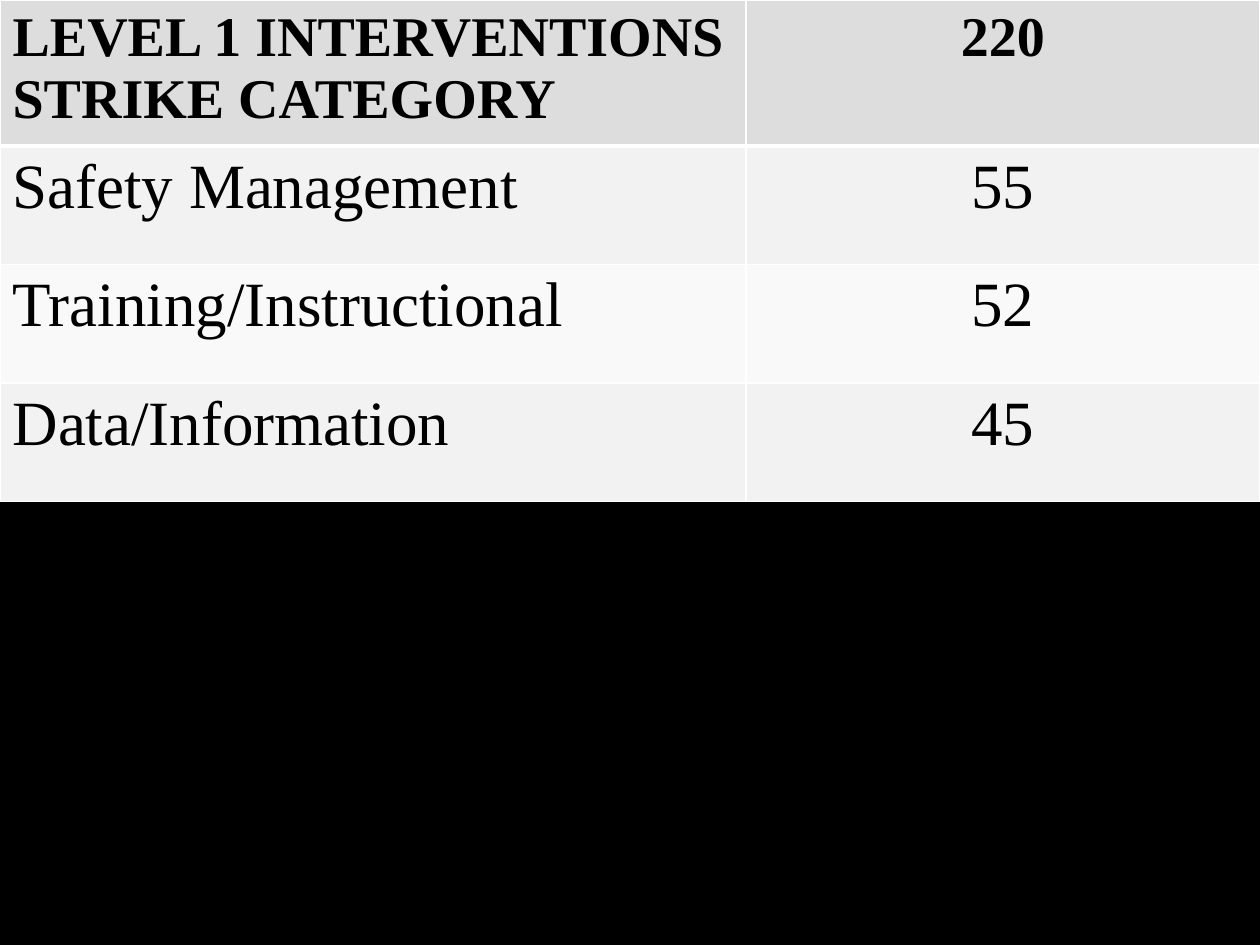
from lxml.etree import SubElement as Sub
from pptx import Presentation
from pptx.dml.color import RGBColor as Rgb
from pptx.enum.text import PP_ALIGN as Align
from pptx.oxml.ns import qn
from pptx.util import Inches, Pt

INK = {
    "back": "000000",
    "text": "000000",
    "rule": "FFFFFF",
    "head": "DDDDDD",
    "odd": "F2F2F2",
    "even": "F9F9F9",
}
ROWS = [
    ("LEVEL 1 INTERVENTIONS STRIKE CATEGORY", "220"),
    ("Safety Management", "55"),
    ("Training/Instructional", "52"),
    ("Data/Information", "45"),
]
WIDTHS = [5.92, 4.08]
HEIGHTS = [1.16, 0.94, 0.94, 0.94]


def write(frame, text, size=36, bold=False, align=Align.LEFT):
    para = frame.paragraphs[0]
    para.alignment = align
    run = para.add_run()
    run.text = text
    font = run.font
    font.name, font.size, font.bold = "Times New Roman", Pt(size), bold
    font.color.rgb = Rgb.from_string(INK["text"])


class Deck:
    def __init__(self, slide):
        self.slide = slide

    def back(self, tone):
        fill = self.slide.background.fill
        fill.solid()
        fill.fore_color.rgb = Rgb.from_string(INK[tone])

    def edge(self, cell, **widths):
        """Draw cell borders; keys L, R, T, B (in that order) give points."""
        props = cell._tc.get_or_add_tcPr()
        for side, width in widths.items():
            line = Sub(props, qn(f"a:ln{side}"), w=str(Pt(width)))
            fill = Sub(line, qn("a:solidFill"))
            Sub(fill, qn("a:srgbClr"), val=INK["rule"])

    def cell(self, cell, text, tone, top=1, base=1, **form):
        self.edge(cell, L=1, R=1, T=top, B=base)
        cell.fill.solid()
        cell.fill.fore_color.rgb = Rgb.from_string(INK[tone])
        write(cell.text_frame, text, **form)

    def table(self, rows, left, top, widths, heights):
        grid = self.slide.shapes.add_table(
            len(rows), len(widths), Inches(left), Inches(top),
            Inches(sum(widths)), Inches(sum(heights))).table
        for col, width in zip(grid.columns, widths):
            col.width = Inches(width)
        for row, height in zip(grid.rows, heights):
            row.height = Inches(height)
        for r, row in enumerate(rows):
            if r == 0:
                form = dict(tone="head", base=3, size=32, bold=True)
            else:
                form = dict(tone="odd" if r % 2 else "even", top=3 if r == 1 else 1)
            for c, text in enumerate(row):
                align = Align.CENTER if c else Align.LEFT
                self.cell(grid.cell(r, c), text, align=align, **form)


def main():
    show = Presentation()
    show.slide_width, show.slide_height = Inches(10), Inches(7.5)
    deck = Deck(show.slides.add_slide(show.slide_layouts[6]))
    deck.back("back")
    deck.table(ROWS, 0, 0, WIDTHS, HEIGHTS)
    show.save("out.pptx")


if __name__ == "__main__":
    main()
